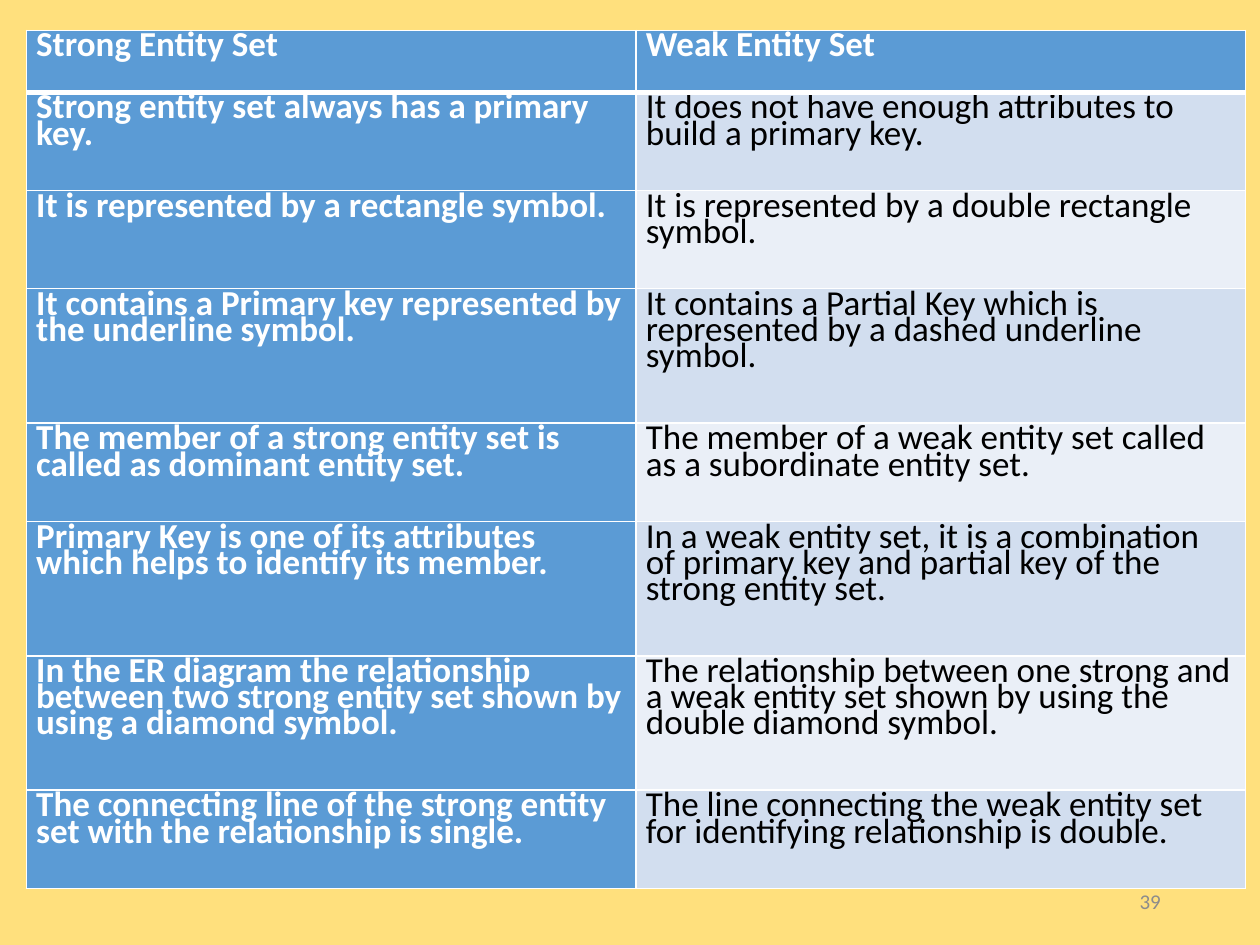
from dataclasses import dataclass

from lxml import etree
from pptx import Presentation
from pptx.dml.color import RGBColor
from pptx.enum.text import MSO_ANCHOR, PP_ALIGN
from pptx.oxml.ns import qn
from pptx.util import Cm, Pt

MIDDLE = MSO_ANCHOR.MIDDLE
RIGHT = PP_ALIGN.RIGHT


@dataclass(frozen=True)
class Theme:
    """Colours, type sizes and line widths of the slide."""

    font: str = "Calibri"
    background: str = "FFE07D"
    accent: str = "5B9BD5"
    bands: tuple = ("D2DEEF", "EAEFF7")
    light: str = "FFFFFF"
    dark: str = "000000"
    muted: str = "8C8C8C"
    body_size: int = 20
    number_size: int = 12
    line_pitch: int = 15
    rule: int = 1
    header_rule: int = 3


COMPARISON = [
    ("Strong Entity Set", "Weak Entity Set"),
    ("Strong entity set always has a primary key.",
     "It does not have enough attributes to build a primary key."),
    ("It is represented by a rectangle symbol.",
     "It is represented by a double rectangle symbol."),
    ("It contains a Primary key represented by the underline symbol.",
     "It contains a Partial Key which is represented by a dashed underline symbol."),
    ("The member of a strong entity set is called as dominant entity set.",
     "The member of a weak entity set called as a subordinate entity set."),
    ("Primary Key is one of its attributes which helps to identify its member.",
     "In a weak entity set, it is a combination of primary key and partial key of the strong entity set."),
    ("In the ER diagram the relationship between two strong entity set shown by using a diamond symbol.",
     "The relationship between one strong and a weak entity set shown by using the double diamond symbol."),
    ("The connecting line of the strong entity set with the relationship is single.",
     "The line connecting the weak entity set for identifying relationship is double."),
]
HEADER, TWO_LINES, THREE_LINES = 1.25, 1.98, 2.71
ROW_HEIGHTS = [HEADER, TWO_LINES, TWO_LINES, THREE_LINES,
               TWO_LINES, THREE_LINES, THREE_LINES, TWO_LINES]


class SlideBuilder:
    """Draws styled elements on the current slide."""

    def __init__(self, slide, theme):
        self.slide = slide
        self.theme = theme

    def background(self):
        fill = self.slide.background.fill
        fill.solid()
        fill.fore_color.rgb = RGBColor.from_string(self.theme.background)

    def run(self, paragraph, text, size, color, bold=False):
        run = paragraph.add_run()
        run.text = text
        run.font.name = self.theme.font
        run.font.size = Pt(size)
        run.font.bold = bold
        run.font.color.rgb = RGBColor.from_string(color)

    def borders(self, cell, row):
        theme = self.theme
        heavy_edge = {0: "lnB", 1: "lnT"}.get(row)
        for edge in ("lnL", "lnR", "lnT", "lnB"):
            width = theme.header_rule if edge == heavy_edge else theme.rule
            line = etree.SubElement(cell._tc.get_or_add_tcPr(), qn(f"a:{edge}"), w=str(Pt(width)))
            fill = etree.SubElement(line, qn("a:solidFill"))
            etree.SubElement(fill, qn("a:srgbClr"), val=theme.light)

    def cell(self, cell, text, row, column):
        theme = self.theme
        emphasized = row == 0 or column == 0
        self.borders(cell, row)
        cell.fill.solid()
        fill_color = theme.accent if emphasized else theme.bands[(row - 1) % 2]
        cell.fill.fore_color.rgb = RGBColor.from_string(fill_color)
        cell.margin_left = cell.margin_right = Cm(0.2)
        cell.margin_top = cell.margin_bottom = Cm(0.2)
        paragraph = cell.text_frame.paragraphs[0]
        paragraph.line_spacing = paragraph.space_after = Pt(theme.line_pitch)
        self.run(paragraph, text, theme.body_size,
                 theme.light if emphasized else theme.dark, emphasized)

    def table(self, rows, heights, left, top, column_width):
        columns = len(rows[0])
        table = self.slide.shapes.add_table(
            len(rows), columns, Cm(left), Cm(top),
            Cm(column_width * columns), Cm(sum(heights))).table
        for column in table.columns:
            column.width = Cm(column_width)
        for row, (texts, height) in enumerate(zip(rows, heights)):
            table.rows[row].height = Cm(height)
            for column, text in enumerate(texts):
                self.cell(table.cell(row, column), text, row, column)

    def page_number(self, number, left, top, width, height):
        frame = self.slide.shapes.add_textbox(
            Cm(left), Cm(top), Cm(width), Cm(height)).text_frame
        frame.word_wrap = True
        frame.vertical_anchor = MIDDLE
        paragraph = frame.paragraphs[0]
        paragraph.alignment = RIGHT
        self.run(paragraph, number, self.theme.number_size, self.theme.muted)


def main():
    presentation = Presentation()
    presentation.slide_width, presentation.slide_height = Cm(25.4), Cm(19.05)
    slide = presentation.slides.add_slide(presentation.slide_layouts[6])
    builder = SlideBuilder(slide, Theme())
    builder.background()
    builder.table(COMPARISON, ROW_HEIGHTS, left=0.53, top=0.61, column_width=12.29)
    builder.page_number("39", left=17.93, top=17.66, width=5.72, height=1.01)
    presentation.save("out.pptx")


if __name__ == "__main__":
    main()
